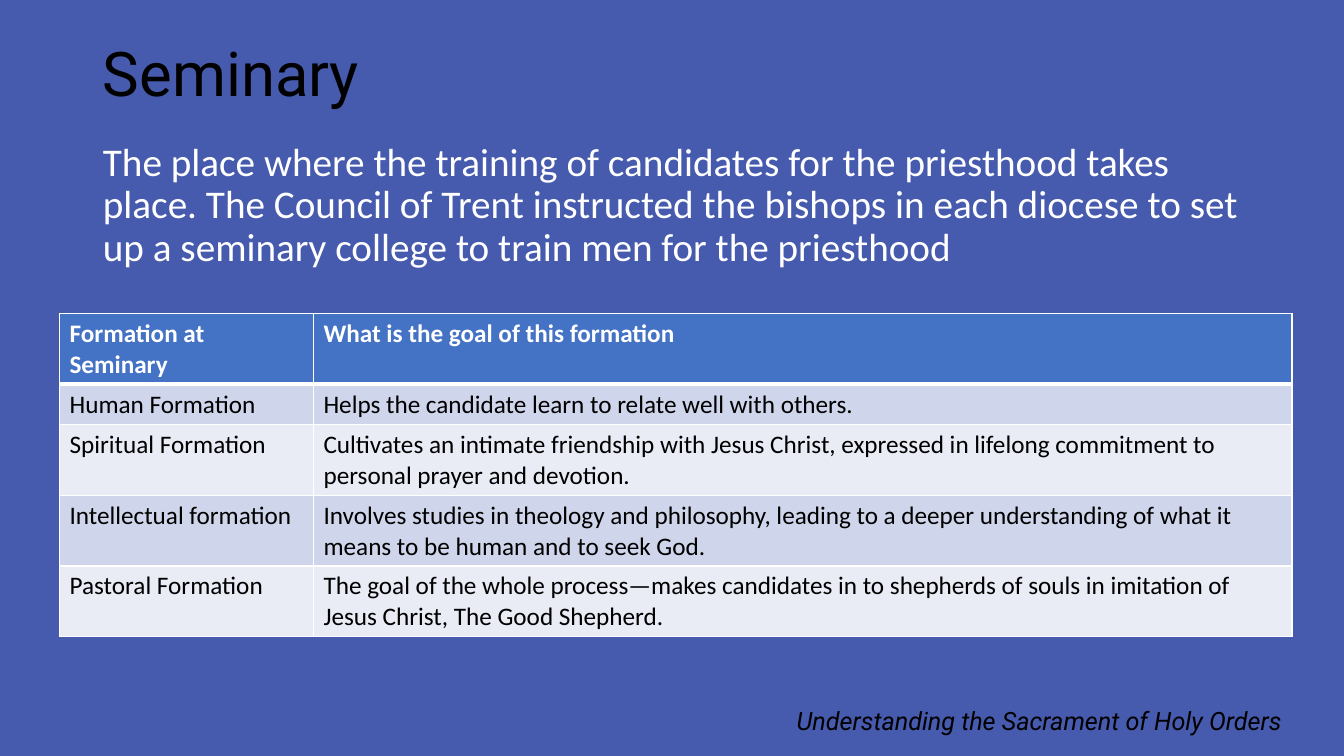
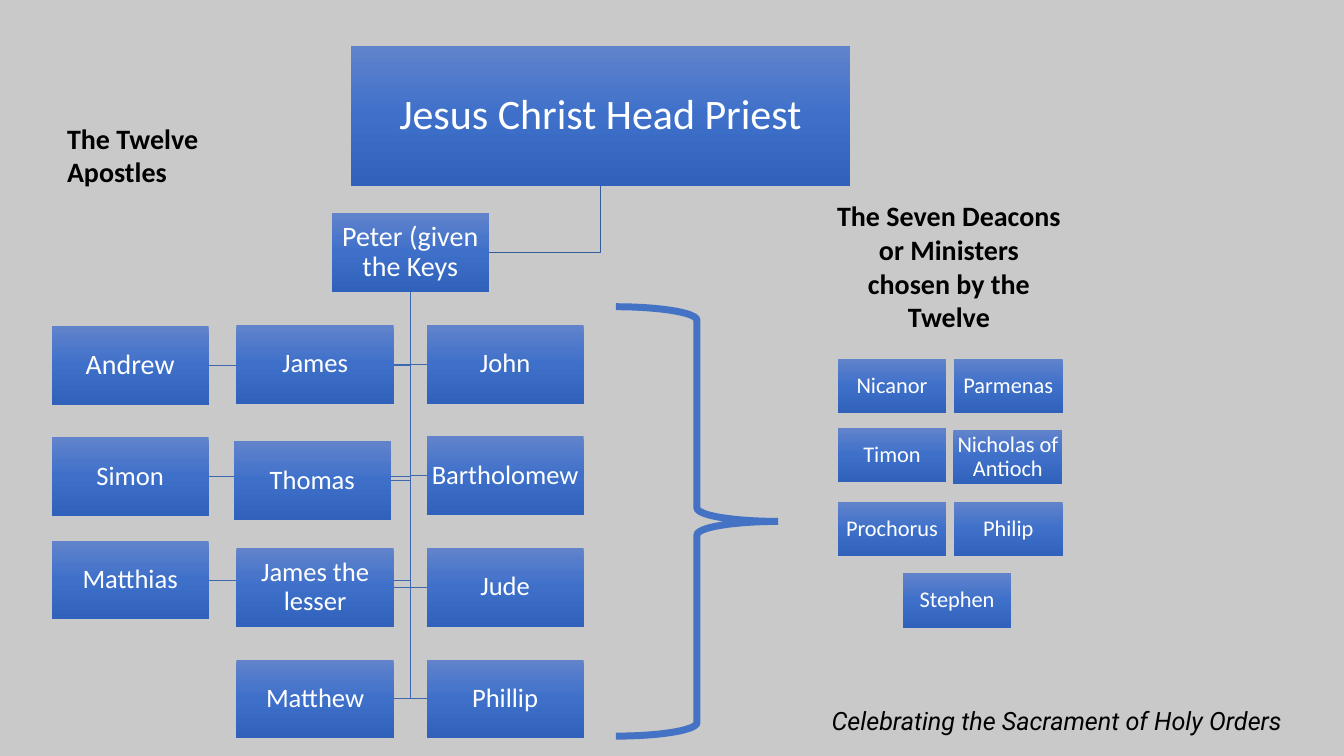
from copy import deepcopy
from dataclasses import dataclass

from lxml.etree import SubElement as Sub
from pptx import Presentation
from pptx.dml.color import RGBColor as RGB
from pptx.enum.shapes import MSO_SHAPE as Shape
from pptx.enum.text import MSO_ANCHOR as Anchor, MSO_AUTO_SIZE as Fit, PP_ALIGN as Align
from pptx.oxml.ns import qn
from pptx.util import Cm, Pt


@dataclass(frozen=True)
class Theme:
    blue: str = "465AAE"
    gray: str = "C9C9C9"
    black: str = "000000"
    white: str = "FFFFFF"
    accent: str = "4472C4"
    bands: tuple = ("CFD5EA", "E9EBF5")
    grad: tuple = ("6183CB", "3E70CA", "3062BB")
    stem: str = "365B9D"
    branch: str = "3E67B2"
    head: str = "Roboto"
    body: str = "Calibri"
    title: int = 44
    lead: int = 28
    top: int = 30
    label: int = 20
    name: int = 19
    small: int = 18
    tiny: int = 16


T = Theme()

GOALS = [
    ("Formation at Seminary", "What is the goal of this formation"),
    ("Human Formation", "Helps the candidate learn to relate well with others."),
    ("Spiritual Formation", "Cultivates an intimate friendship with Jesus Christ, "
     "expressed in lifelong commitment to personal prayer and devotion."),
    ("Intellectual formation", "Involves studies in theology and philosophy, leading to "
     "a deeper understanding of what it means to be human and to seek God."),
    ("Pastoral Formation", "The goal of the whole process—makes candidates in to "
     "shepherds of souls in imitation of Jesus Christ, The Good Shepherd."),
]

# Apostles by column: name, left, top, type size
LEFT = [("Andrew", 1.3, 8.22, T.label), ("Simon", 1.3, 11.02, T.name),
        ("Matthias", 1.3, 13.63, T.name)]
MID = [("James", 5.96, 8.19, T.name), ("Thomas", 5.89, 11.12, T.name),
       ("James the lesser", 5.96, 13.81, T.name), ("Matthew", 5.96, 16.62, T.name)]
RIGHT = [(name, 10.75, 8.19 + 2.81 * i, T.name)
         for i, name in enumerate(["John", "Bartholomew", "Jude", "Phillip"])]

DEACONS = [("Nicanor", 21.11, 9.04), ("Parmenas", 24.04, 9.04),
           ("Timon", 21.11, 10.78), ("Nicholas of Antioch", 24.03, 10.83),
           ("Prochorus", 21.11, 12.65), ("Philip", 24.04, 12.65),
           ("Stephen", 22.75, 14.45)]


# Text and placement
def rgb(code):
    return RGB.from_string(code)


def cms(*sizes):
    return [Cm(size) for size in sizes]


def write(frame, text, size, color, face=T.body, align=Align.LEFT, lines=1.0,
          bold=False, italic=False):
    frame.text = text
    frame.word_wrap = True
    para = frame.paragraphs[0]
    para.alignment, para.line_spacing, para.space_before = align, lines, Pt(0)
    font = para.runs[0].font
    font.name, font.size, font.bold, font.italic = face, Pt(size), bold, italic
    font.color.rgb = rgb(color)


def plain(para):
    props = para._p.get_or_add_pPr()
    props.set("marL", "0")
    props.set("indent", "0")
    Sub(props, qn("a:buNone"))


def place(holder, area):
    holder.left, holder.top, holder.width, holder.height = cms(*area)
    holder.text_frame.auto_size = Fit.NONE
    holder.text_frame.vertical_anchor = Anchor.TOP


def label(slide, text, area, align=Align.LEFT):
    box = slide.shapes.add_textbox(*cms(*area))
    write(box.text_frame, text, T.label, T.black, align=align, bold=True)


def footer(slide, text):
    box = slide.shapes.add_textbox(*cms(16.89, 17.65, 15.67, 1.02))
    write(box.text_frame, text, T.small, T.black, T.head, Align.RIGHT, italic=True)


def start(deck, layout, back, foot):
    slide = deck.slides.add_slide(deck.slide_layouts[layout])
    slide.background.fill.solid()
    slide.background.fill.fore_color.rgb = rgb(back)
    footer(slide, foot)
    return slide


# Table
def border(cell, top, base):
    props = cell._tc.get_or_add_tcPr()
    for side, width in (("L", 1), ("R", 1), ("T", top), ("B", base)):
        line = Sub(props, qn(f"a:ln{side}"), w=str(Pt(width)))
        Sub(Sub(line, qn("a:solidFill")), qn("a:srgbClr"), val=T.white)


def grid(slide, rows, left, top, widths, heights):
    table = slide.shapes.add_table(len(rows), len(widths), *cms(
        left, top, sum(widths), sum(heights))).table
    for col, width in zip(table.columns, widths):
        col.width = Cm(width)
    for r, (row, height) in enumerate(zip(rows, heights)):
        table.rows[r].height = Cm(height)
        for c, text in enumerate(row):
            cell, head = table.cell(r, c), r == 0
            border(cell, 3 if r == 1 else 1, 3 if head else 1)
            cell.fill.solid()
            cell.fill.fore_color.rgb = rgb(T.accent if head else T.bands[(r - 1) % 2])
            write(cell.text_frame, text, T.small, T.white if head else T.black, bold=head)


# Chart boxes and lines
def shade(shape):
    fill = shape.fill
    fill.gradient()
    fill.gradient_angle = 270
    stops = shape._element.spPr.find(".//" + qn("a:gsLst"))
    stops.append(deepcopy(stops[0]))
    for i, (stop, code) in enumerate(zip(fill.gradient_stops, T.grad)):
        stop.position = i / 2
        stop.color.rgb = rgb(code)


def block(slide, text, left, top, size, width=3.96, height=1.98):
    box = slide.shapes.add_shape(Shape.RECTANGLE, *cms(left, top, width, height))
    box.shadow.inherit = False
    box.line.fill.background()
    shade(box)
    frame = box.text_frame
    frame.margin_left = frame.margin_right = Cm(0.03)
    frame.margin_top = frame.margin_bottom = Cm(0.03)
    frame.vertical_anchor = Anchor.MIDDLE
    write(frame, text, size, T.white, align=Align.CENTER, lines=0.9)
    return box


def stroke(shape, color, width):
    shape.shadow.inherit = False
    shape.fill.background()
    shape.line.color.rgb = rgb(color)
    shape.line.width = Pt(width)


def elbow(slide, upper, lower, color):
    """Run down from the upper box, then across to the near side of the lower."""
    x, y = upper.left + upper.width // 2, lower.top + lower.height // 2
    side = lower.left if lower.left > x else lower.left + lower.width
    pen = slide.shapes.build_freeform(x, upper.top + upper.height)
    pen.add_line_segments([(x, y), (side, y)], close=False)
    stroke(pen.convert_to_shape(), color, 0.5)


def brace(slide, area):
    mark = slide.shapes.add_shape(Shape.RIGHT_BRACE, *cms(*area))
    stroke(mark, T.accent, 5)
    Sub(mark._element.spPr.find(qn("a:ln")), qn("a:miter"), lim="800000")


# Slides
def seminary(deck):
    slide = start(deck, 1, T.blue, "Understanding the Sacrament of Holy Orders")
    title, body = slide.placeholders
    place(title, (2.34, 0.97, 29.21, 3.68))
    write(title.text_frame, "Seminary", T.title, T.black, T.head, lines=0.9)
    place(body, (2.34, 3.47, 29.21, 12.09))
    write(body.text_frame, "The place where the training of candidates for the priesthood "
          "takes place. The Council of Trent instructed the bishops in each diocese to set "
          "up a seminary college to train men for the priesthood",
          T.lead, T.white, lines=0.9)
    plain(body.text_frame.paragraphs[0])
    grid(slide, GOALS, 1.5, 7.9, (6.4, 24.66), (1.78, 1.02, 1.78, 1.78, 1.78))


def orders(deck):
    slide = start(deck, 6, T.gray, "Celebrating the Sacrament of Holy Orders")
    # Head priest and Peter
    christ = block(slide, "Jesus Christ Head Priest", 8.84, 1.16, T.top, 12.59, 3.53)
    peter = block(slide, "Peter (given the Keys", 8.36, 5.37, T.label)
    elbow(slide, christ, peter, T.stem)
    # Apostles: later columns cover the lines of earlier ones
    for name, left, top, size in LEFT + MID + RIGHT:
        box = block(slide, name, left, top, size)
        elbow(slide, peter, box, T.branch)
    label(slide, "The Twelve Apostles", (1.44, 2.93, 6.17, 1.96))
    brace(slide, (15.52, 7.73, 4.09, 10.82))
    # Deacons
    for name, left, top in DEACONS:
        block(slide, name, left, top, T.tiny, 2.74, 1.37)
    label(slide, "The Seven Deacons or Ministers chosen by the Twelve",
          (20.83, 4.89, 6.17, 3.68), Align.CENTER)


def main():
    deck = Presentation()
    deck.slide_width, deck.slide_height = cms(33.87, 19.05)
    seminary(deck)
    orders(deck)
    deck.save("out.pptx")


if __name__ == "__main__":
    main()
